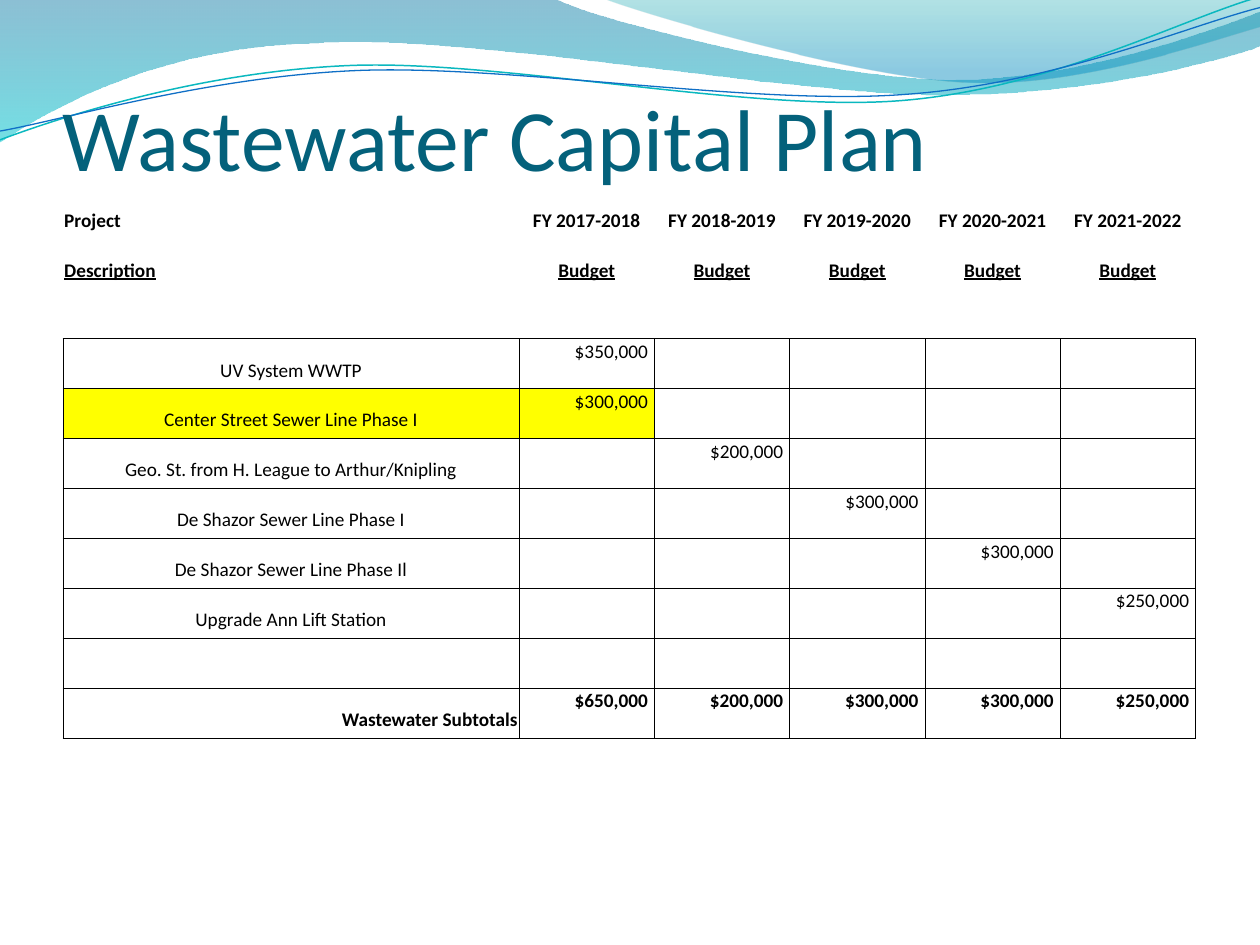
from math import cos, radians, sin

from lxml import etree
from pptx import Presentation
from pptx.dml.color import RGBColor
from pptx.enum.text import MSO_ANCHOR, PP_ALIGN
from pptx.oxml.ns import qn
from pptx.util import Inches, Pt

LEFT, CENTER, RIGHT = PP_ALIGN.LEFT, PP_ALIGN.CENTER, PP_ALIGN.RIGHT
TOP, BOTTOM = MSO_ANCHOR.TOP, MSO_ANCHOR.BOTTOM

FONT = "Calibri"
COLORS = {
    "title": "04617B", "text": "000000", "border": "000000",
    "highlight": "FFFF00", "deep_blue": "0074A1", "aqua": "00C6CF",
    "teal": "00A1A9", "blue": "008BBF", "teal_line": "0AB8BF",
    "blue_line": "0F6FC6",
}

# Outlines in inches: one point is a straight line, three are a Bezier curve
LEFT_WAVE = [
    [(0, 0)], [(4.4, -0.01)], [(4.76, 0.17), (6.64, 0.63), (7.58, 0.63)],
    [(8.53, 0.63), (9.58, 0.26), (10, 0.09)], [(10.01, 0.36)],
    [(9.83, 0.44), (8.7, 0.76), (7.46, 0.75)],
    [(6.22, 0.75), (3.82, 0.28), (2.57, 0.34)],
    [(1.29, 0.36), (0.46, 0.83), (-0.01, 1.13)], [(0, 0)],
]
RIGHT_WAVE = [
    [(4.79, -0.01)], [(5.09, 0.11), (6.82, 0.62), (7.69, 0.65)],
    [(8.56, 0.69), (9.61, 0.32), (10, 0.21)], [(10, 0)], [(4.79, -0.01)],
]
TEAL_CURVE = [
    [(0, 1.11)], [(0.48, 0.93), (1.58, 0.57), (2.77, 0.52)],
    [(3.95, 0.47), (5.93, 0.89), (7.13, 0.8)],
    [(8.33, 0.71), (9.38, 0.15), (9.98, -0.02)],
]
BLUE_CURVE = [
    [(0, 1.04)], [(0.47, 0.96), (1.64, 0.61), (2.83, 0.56)],
    [(4.03, 0.51), (5.97, 0.84), (7.17, 0.75)],
    [(8.36, 0.67), (9.41, 0.21), (10, 0.06)],
]
CURVE_TILT = -2.7

YEARS = [f"FY {year}-{year + 1}" for year in range(2017, 2022)]
# Project, then its amount by year index
PROJECTS = [
    ("UV System WWTP", {0: "$350,000"}),
    ("Center Street Sewer Line Phase I", {0: "$300,000"}),
    ("Geo. St. from H. League to Arthur/Knipling", {1: "$200,000"}),
    ("De Shazor Sewer Line Phase I", {2: "$300,000"}),
    ("De Shazor Sewer Line Phase Il", {3: "$300,000"}),
    ("Upgrade Ann Lift Station", {4: "$250,000"}),
    ("", {}),
]
HIGHLIGHTED = "Center Street Sewer Line Phase I"
SUBTOTALS = ["$650,000", "$200,000", "$300,000", "$300,000", "$250,000"]
HEADER_ROWS = 3
TABLE_WIDTH, PROJECT_WIDTH = 8.99, 3.62


def rgb(name):
    return RGBColor.from_string(COLORS[name])


def level(outline, angle, cx=4.99, cy=0.58):
    """Turn an outline back by an angle, so that the shape can carry the rotation."""
    a = radians(-angle)
    return [[(cx + (x - cx) * cos(a) - (y - cy) * sin(a),
              cy + (x - cx) * sin(a) + (y - cy) * cos(a)) for x, y in seg]
            for seg in outline]


def add_outline(s, outline, close):
    """Draw all points as lines, then merge each group of three into a curve."""
    pts = [(Inches(x), Inches(y)) for seg in outline for x, y in seg]
    builder = s.shapes.build_freeform(*pts[0])
    builder.add_line_segments(pts[1:], close=close)
    sp = builder.convert_to_shape()
    sp.shadow.inherit = False
    lines = iter(list(sp._element.iter(qn("a:lnTo"))))
    for seg in outline[1:]:
        first, *others = [next(lines) for _ in seg]
        if others:
            curve = etree.Element(qn("a:cubicBezTo"))
            first.addprevious(curve)
            for line in (first, *others):
                curve.append(line[0])
                line.getparent().remove(line)
    return sp


def add_wave(s, outline, stops):
    sp = add_outline(s, outline, True)
    sp.line.fill.background()
    sp.fill.gradient()
    sp.fill.gradient_angle = 270
    for stop, (position, color, _) in zip(sp.fill.gradient_stops, stops):
        stop.position = position
        stop.color.rgb = rgb(color)
    for clr, (_, _, alpha) in zip(sp._element.spPr.iter(qn("a:srgbClr")), stops):
        etree.SubElement(clr, qn("a:alpha"), val=str(alpha * 1000))


def add_curve(s, outline, color, width):
    sp = add_outline(s, level(outline, CURVE_TILT), False)
    sp.rotation = CURVE_TILT
    sp.fill.background()
    sp.line.color.rgb = rgb(color)
    sp.line.width = Pt(width)


def add_title(s, text):
    tf = s.shapes.add_textbox(Inches(0.5), Inches(0.42), Inches(9), Inches(1.08)).text_frame
    tf.word_wrap = True
    tf.vertical_anchor = BOTTOM
    tf.margin_left = tf.margin_right = tf.margin_bottom = 0
    p = tf.paragraphs[0]
    p.text = text
    p.font.name, p.font.size, p.font.color.rgb = FONT, Pt(50), rgb("title")


def set_borders(cell, sides):
    tcPr = cell._tc.get_or_add_tcPr()
    for side in "LRTB":
        ln = etree.SubElement(tcPr, qn(f"a:ln{side}"), w=str(Pt(0.5)))
        if side in sides:
            fill = etree.SubElement(ln, qn("a:solidFill"))
            etree.SubElement(fill, qn("a:srgbClr"), val=COLORS["border"])
        else:
            etree.SubElement(ln, qn("a:noFill"))


def set_cell(cell, text, align, anchor, sides, bold=False, underline=False, fill=None):
    set_borders(cell, sides)
    if fill:
        cell.fill.solid()
        cell.fill.fore_color.rgb = rgb(fill)
    else:
        cell.fill.background()
    cell.vertical_anchor = anchor
    cell.margin_left = cell.margin_top = cell.margin_right = Inches(0.01)
    cell.margin_bottom = Inches(0.05)
    if anchor == TOP:
        cell.margin_right = Inches(0.05)
    p = cell.text_frame.paragraphs[0]
    p.text = text
    p.alignment = align
    p.font.name, p.font.size, p.font.color.rgb = FONT, Pt(11), rgb("text")
    p.font.bold, p.font.underline = bold, underline


def add_plan_table(s):
    count = len(YEARS)
    headers = [["Project"] + YEARS, ["Description"] + ["Budget"] * count, [""] * (count + 1)]
    rows = HEADER_ROWS + len(PROJECTS) + 1
    table = s.shapes.add_table(rows, count + 1, Inches(0.5), Inches(1.5),
                               Inches(TABLE_WIDTH), Inches(4.36)).table
    table.first_row = table.horz_banding = False
    table.columns[0].width = Inches(PROJECT_WIDTH)
    for c in range(1, count + 1):
        table.columns[c].width = Inches((TABLE_WIDTH - PROJECT_WIDTH) / count)

    # Headings
    for r, texts in enumerate(headers):
        for c, text in enumerate(texts):
            set_cell(table.cell(r, c), text, CENTER if c else LEFT, BOTTOM,
                     "B" if r == HEADER_ROWS - 1 else "", bold=True, underline=r == 1)

    # Projects and subtotals
    body = PROJECTS + [("Wastewater Subtotals", dict(enumerate(SUBTOTALS)))]
    for r, (name, amounts) in enumerate(body, HEADER_ROWS):
        total = r == rows - 1
        fill = "highlight" if name == HIGHLIGHTED else None
        set_cell(table.cell(r, 0), name, RIGHT if total else CENTER, BOTTOM, "LRTB",
                 bold=total, fill=fill)
        for i in range(count):
            set_cell(table.cell(r, i + 1), amounts.get(i, ""), RIGHT, TOP, "LRTB",
                     bold=total, fill=fill if i in amounts else None)


def main():
    prs = Presentation()
    prs.slide_width, prs.slide_height = Inches(10), Inches(7.5)
    s = prs.slides.add_slide(prs.slide_layouts[6])

    # Wave decoration
    add_wave(s, LEFT_WAVE, [(0, "deep_blue", 45), (1, "aqua", 55)])
    add_wave(s, RIGHT_WAVE, [(0, "teal", 30), (0.8, "blue", 45)])
    add_curve(s, TEAL_CURVE, "teal_line", 0.85)
    add_curve(s, BLUE_CURVE, "blue_line", 0.75)

    # Content
    add_title(s, "Wastewater Capital Plan")
    add_plan_table(s)
    prs.save("out.pptx")


if __name__ == "__main__":
    main()
